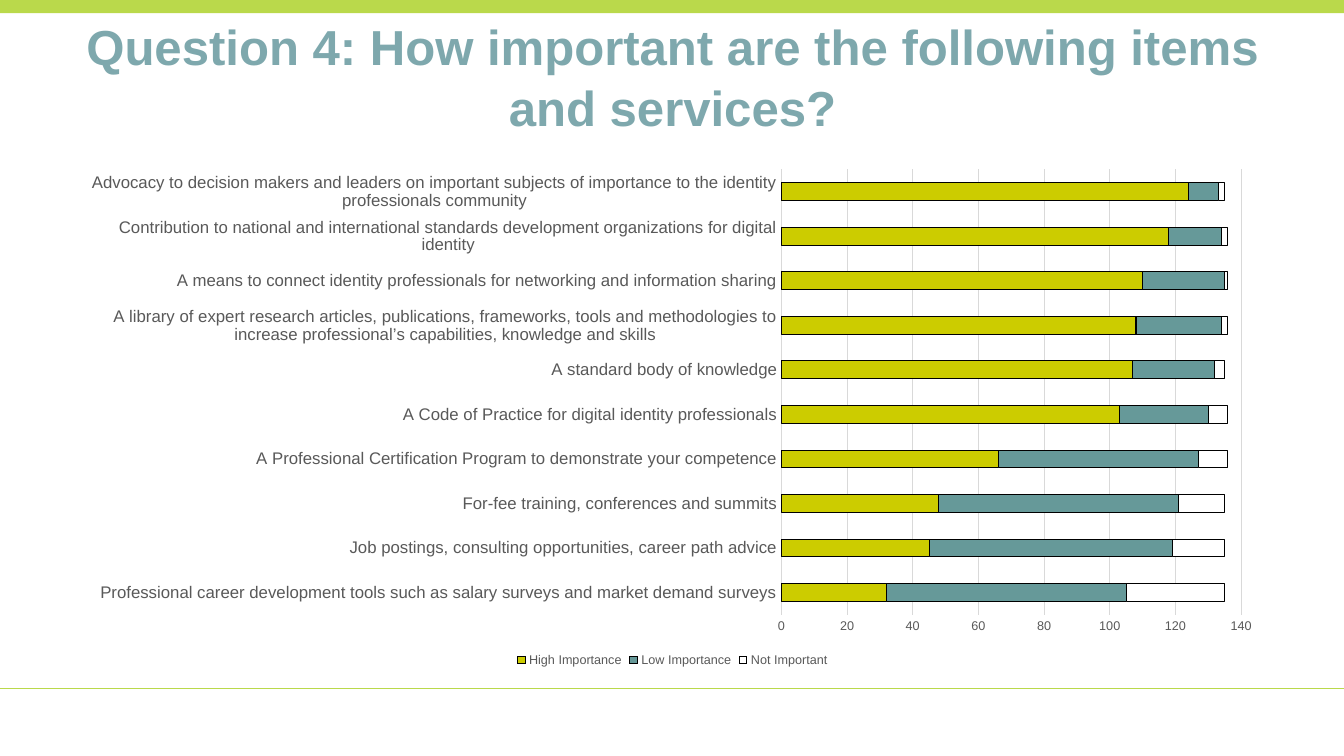
from dataclasses import dataclass

from lxml import etree
from pptx import Presentation
from pptx.chart.data import CategoryChartData
from pptx.dml.color import RGBColor
from pptx.enum.chart import XL_CHART_TYPE, XL_LEGEND_POSITION, XL_TICK_MARK
from pptx.enum.shapes import MSO_CONNECTOR, MSO_SHAPE
from pptx.enum.text import MSO_ANCHOR, MSO_AUTO_SIZE, PP_ALIGN
from pptx.oxml.ns import qn
from pptx.util import Inches, Pt

STACKED_BAR = XL_CHART_TYPE.BAR_STACKED
LEGEND_BOTTOM = XL_LEGEND_POSITION.BOTTOM
NO_TICK = XL_TICK_MARK.NONE
STRAIGHT = MSO_CONNECTOR.STRAIGHT
RECTANGLE = MSO_SHAPE.RECTANGLE
MIDDLE = MSO_ANCHOR.MIDDLE
NO_AUTOFIT = MSO_AUTO_SIZE.NONE
CENTER = PP_ALIGN.CENTER

FONT = "Arial"
LIME = "BAD94B"
TITLE_BLUE = "7EA8AD"
LABEL_GREY = "595959"
GRID_GREY = "D9D9D9"
SLIDE_WIDTH = 13.33
MARGIN = 0.67
CONTENT_WIDTH = 12
TITLE = "Question 4: How important are the following items and services?"


@dataclass(frozen=True)
class Rating:
    """One level of importance and its bar colour."""

    name: str
    color: str


@dataclass(frozen=True)
class Service:
    """One item of the survey and its votes per rating."""

    label: str
    votes: tuple[int, int, int]


RATINGS = (
    Rating("High Importance", "CCCC00"),
    Rating("Low Importance", "669999"),
    Rating("Not Important", "FFFFFF"),
)

SERVICES = (
    Service("Professional career development tools such as salary surveys "
            "and market demand surveys", (32, 73, 30)),
    Service("Job postings, consulting opportunities, career path advice", (45, 74, 16)),
    Service("For-fee training, conferences and summits", (48, 73, 14)),
    Service("A Professional Certification Program to demonstrate your competence",
            (66, 61, 9)),
    Service("A Code of Practice for digital identity professionals", (103, 27, 6)),
    Service("A standard body of knowledge", (107, 25, 3)),
    Service("A library of expert research articles, publications, frameworks, tools and "
            "methodologies to increase professional’s capabilities, knowledge and skills",
            (108, 26, 2)),
    Service("A means to connect identity professionals for networking and "
            "information sharing", (110, 25, 1)),
    Service("Contribution to national and international standards development "
            "organizations for digital identity", (118, 16, 2)),
    Service("Advocacy to decision makers and leaders on important subjects of "
            "importance to the identity professionals community", (124, 9, 2)),
)


def rgb(color: str) -> RGBColor:
    """Turn a hex string into a colour."""
    return RGBColor.from_string(color)


def style_font(font, size: float, color: str, bold: bool = False) -> None:
    """Set the face, size, colour and weight of a font."""
    font.name = FONT
    font.size = Pt(size)
    font.bold = bold
    font.color.rgb = rgb(color)


def style_line(line, color: str, width: float) -> None:
    """Set the colour and width of a line."""
    line.color.rgb = rgb(color)
    line.width = Pt(width)


def add_frame(slide) -> None:
    """Draw the top band and the footer rule."""
    band = slide.shapes.add_shape(RECTANGLE, 0, 0, Inches(SLIDE_WIDTH), Inches(0.13))
    band.shadow.inherit = False
    band.fill.solid()
    band.fill.fore_color.rgb = rgb(LIME)
    band.line.fill.background()
    rule = slide.shapes.add_connector(
        STRAIGHT, 0, Inches(6.83), Inches(SLIDE_WIDTH), Inches(6.83))
    style_line(rule.line, LIME, 0.5)
    etree.SubElement(rule._element.spPr, qn("a:effectLst"))


def add_title(slide) -> None:
    """Place and format the title."""
    title = slide.shapes.title
    title.left, title.top = Inches(MARGIN), Inches(0.17)
    title.width, title.height = Inches(CONTENT_WIDTH), Inches(1.15)
    frame = title.text_frame
    frame.word_wrap = True
    frame.auto_size = NO_AUTOFIT
    frame.vertical_anchor = MIDDLE
    paragraph = frame.paragraphs[0]
    paragraph.alignment = CENTER
    paragraph.line_spacing = 1.04
    run = paragraph.add_run()
    run.text = TITLE
    style_font(run.font, 35.1, TITLE_BLUE, bold=True)


def set_plot_area(chart, x: float, y: float, w: float, h: float) -> None:
    """Fix the inner plot area as fractions of the chart."""
    plot_area = chart._chartSpace.chart.plotArea
    for old_layout in plot_area.findall(qn("c:layout")):
        plot_area.remove(old_layout)
    layout = etree.Element(qn("c:layout"))
    plot_area.insert(0, layout)
    manual = etree.SubElement(layout, qn("c:manualLayout"))
    settings = {"layoutTarget": "inner", "xMode": "edge", "yMode": "edge",
                "x": x, "y": y, "w": w, "h": h}
    for tag, value in settings.items():
        etree.SubElement(manual, qn(f"c:{tag}")).set("val", str(value))


def style_axes(chart) -> None:
    """Format both axes and the grid."""
    for axis, size in ((chart.category_axis, 12), (chart.value_axis, 9)):
        axis.major_tick_mark = axis.minor_tick_mark = NO_TICK
        style_font(axis.tick_labels.font, size, LABEL_GREY)
    style_line(chart.category_axis.format.line, GRID_GREY, 0.75)
    values = chart.value_axis
    values.minimum_scale, values.maximum_scale, values.major_unit = 0, 140, 20
    values.format.line.fill.background()
    values.has_major_gridlines = True
    style_line(values.major_gridlines.format.line, GRID_GREY, 0.75)


def add_survey_chart(slide) -> None:
    """Add the stacked bars of votes per service."""
    data = CategoryChartData()
    data.categories = [service.label for service in SERVICES]
    for index, rating in enumerate(RATINGS):
        data.add_series(rating.name, [service.votes[index] for service in SERVICES])
    chart = slide.shapes.add_chart(
        STACKED_BAR, Inches(MARGIN), Inches(1.58),
        Inches(CONTENT_WIDTH), Inches(5.08), data).chart
    style_font(chart.font, 10, "000000")
    chart.has_title = False
    chart.has_legend = True
    chart.legend.position = LEGEND_BOTTOM
    chart.legend.include_in_layout = False
    style_font(chart.legend.font, 9, LABEL_GREY)
    plot = chart.plots[0]
    plot.vary_by_categories = False
    plot.gap_width, plot.overlap = 150, 100
    for series, rating in zip(plot.series, RATINGS):
        series.format.fill.solid()
        series.format.fill.fore_color.rgb = rgb(rating.color)
        style_line(series.format.line, "000000", 0.75)
    style_axes(chart)
    set_plot_area(chart, 0.59, 0.02, 0.38, 0.87)


def main() -> None:
    """Build and save the survey slide."""
    presentation = Presentation()
    presentation.slide_width = Inches(SLIDE_WIDTH)
    presentation.slide_height = Inches(7.5)
    slide = presentation.slides.add_slide(presentation.slide_layouts.get_by_name("Title Only"))
    add_frame(slide)
    add_title(slide)
    add_survey_chart(slide)
    presentation.save("out.pptx")


if __name__ == "__main__":
    main()
